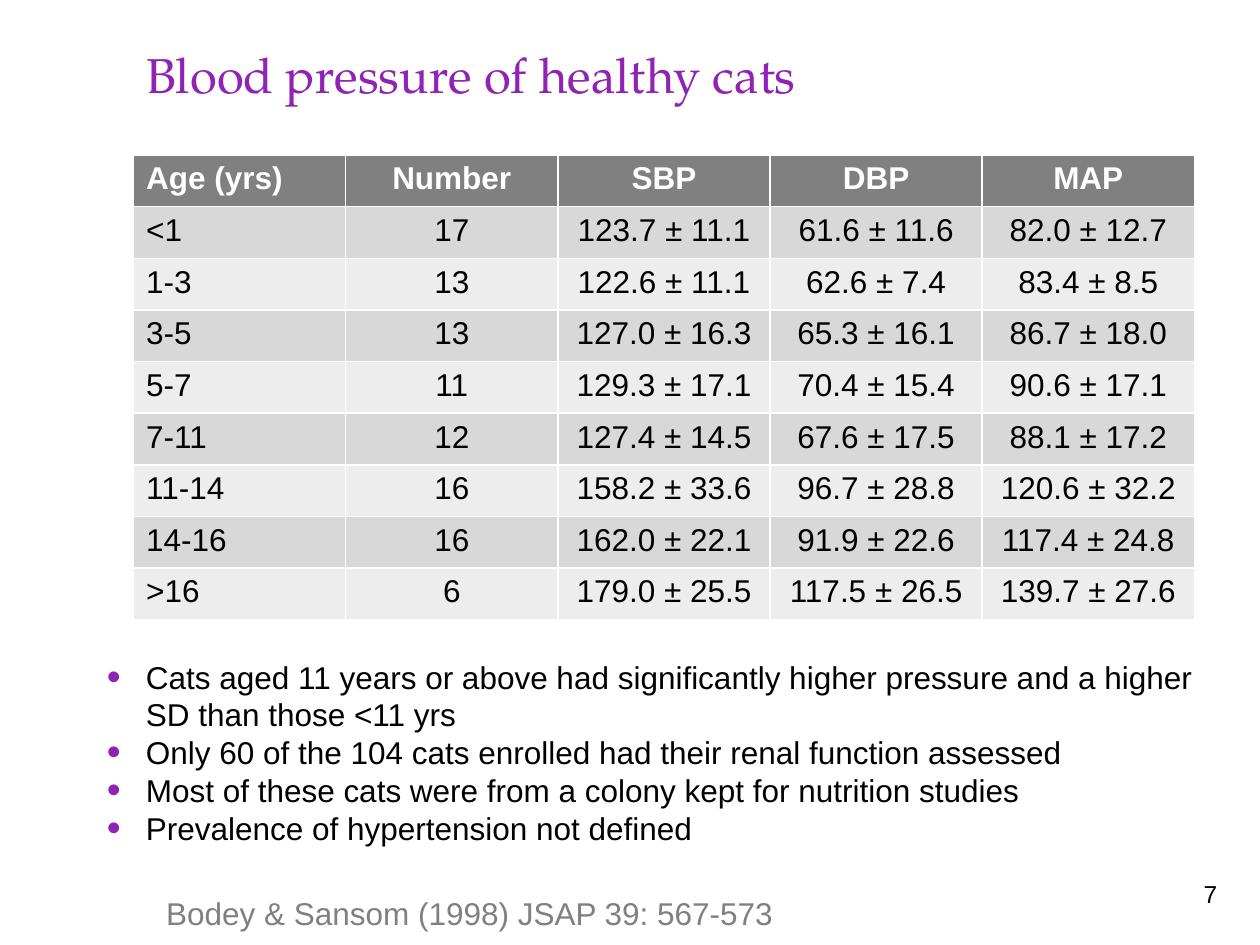
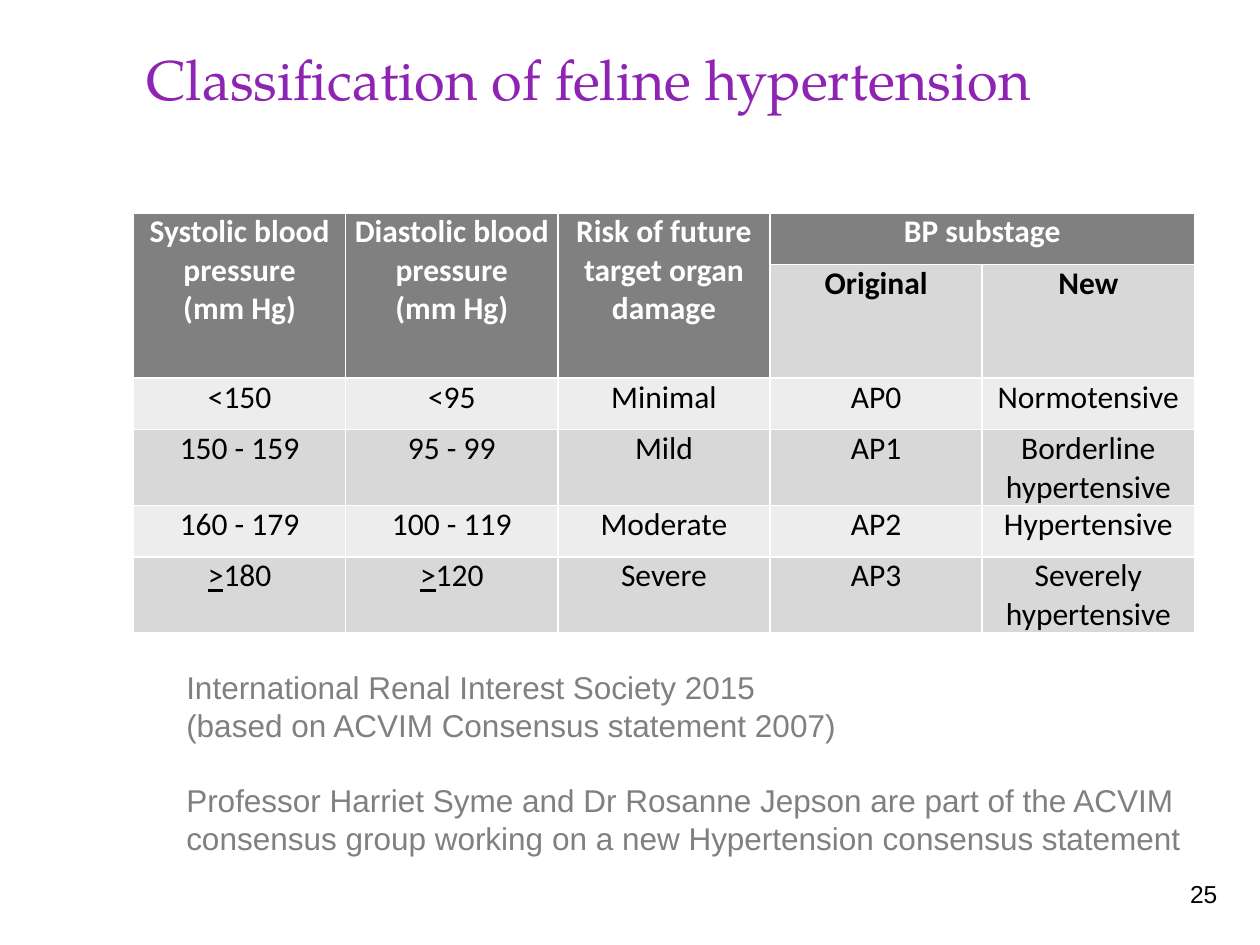
from lxml import etree
from pptx import Presentation
from pptx import util as u
from pptx.dml.color import RGBColor
from pptx.enum import text
from pptx.oxml import ns

PURPLE = RGBColor(0x8F, 0x23, 0xB3)
GREY = RGBColor(0x80, 0x80, 0x80)
BAND_DARK = RGBColor(0xD8, 0xD8, 0xD8)
BAND_LIGHT = RGBColor(0xED, 0xED, 0xED)
WHITE = RGBColor(0xFF, 0xFF, 0xFF)
BLACK = RGBColor(0, 0, 0)

TITLE_FONT = "TeX Gyre Pagella"
BODY_FONT = "Arial"
LEFT, WIDTH, ROW_HEIGHT = 1.06, 8.42, 0.41
TITLE_ONLY = 5
CENTER, RIGHT = text.PP_ALIGN.CENTER, text.PP_ALIGN.RIGHT

READINGS = [
    ("Age (yrs)", "Number", "SBP", "DBP", "MAP"),
    ("<1", "17", "123.7 ± 11.1", "61.6 ± 11.6", "82.0 ± 12.7"),
    ("1-3", "13", "122.6 ± 11.1", "62.6 ± 7.4", "83.4 ± 8.5"),
    ("3-5", "13", "127.0 ± 16.3", "65.3 ± 16.1", "86.7 ± 18.0"),
    ("5-7", "11", "129.3 ± 17.1", "70.4 ± 15.4", "90.6 ± 17.1"),
    ("7-11", "12", "127.4 ± 14.5", "67.6 ± 17.5", "88.1 ± 17.2"),
    ("11-14", "16", "158.2 ± 33.6", "96.7 ± 28.8", "120.6 ± 32.2"),
    ("14-16", "16", "162.0 ± 22.1", "91.9 ± 22.6", "117.4 ± 24.8"),
    (">16", "6", "179.0 ± 25.5", "117.5 ± 26.5", "139.7 ± 27.6"),
]
FINDINGS = [
    "Cats aged 11 years or above had significantly higher pressure and a higher SD than those <11 yrs",
    "Only 60 of the 104 cats enrolled had their renal function assessed",
    "Most of these cats were from a colony kept for nutrition studies",
    "Prevalence of hypertension not defined",
]
STAGES = [
    ("Systolic blood pressure\n(mm Hg)", "Diastolic blood pressure\n(mm Hg)",
     "Risk of future target organ damage", "BP substage", ""),
    ("", "", "", "Original", "New"),
    ("<150", "<95", "Minimal", "AP0", "Normotensive"),
    ("150 - 159", "95 - 99", "Mild", "AP1", "Borderline hypertensive"),
    ("160 - 179", "100 - 119", "Moderate", "AP2", "Hypertensive"),
    (">180", ">120", "Severe", "AP3", "Severely hypertensive"),
]
STAGE_HEIGHTS = [ROW_HEIGHT, 0.49, ROW_HEIGHT, 0.6, ROW_HEIGHT, 0.6]
SOURCES = [
    "International Renal Interest Society 2015",
    "(based on ACVIM Consensus statement 2007)",
    "Professor Harriet Syme and Dr Rosanne Jepson are part of the ACVIM "
    "consensus group working on a new Hypertension consensus statement",
]


def set_font(para, size, color, name=BODY_FONT, bold=False):
    font = para.font
    font.size, font.name, font.bold = u.Pt(size), name, bold
    font.color.rgb = color


def add_bullet(para):
    properties = para._p.get_or_add_pPr()
    indent = u.Inches(0.31)
    properties.set("marL", str(indent))
    properties.set("indent", str(-indent))
    color = etree.SubElement(properties, ns.qn("a:buClr"))
    etree.SubElement(color, ns.qn("a:srgbClr"), val=str(PURPLE))
    etree.SubElement(properties, ns.qn("a:buSzPct"), val="126000")
    etree.SubElement(properties, ns.qn("a:buFont"), typeface=BODY_FONT)
    etree.SubElement(properties, ns.qn("a:buChar"), char="•")


class Deck:
    def __init__(self):
        self.deck = Presentation()
        self.deck.slide_width, self.deck.slide_height = u.Inches(10), u.Inches(7.5)
        self.page = None

    def add_page(self, title, title_size, number):
        self.page = self.deck.slides.add_slide(self.deck.slide_layouts[TITLE_ONLY])
        box = self.page.shapes.title
        box.left, box.top = u.Inches(LEFT), u.Inches(0.31)
        box.width, box.height = u.Inches(WIDTH), u.Inches(1.18)
        frame = box.text_frame
        frame.text = title
        frame.auto_size = text.MSO_AUTO_SIZE.NONE
        frame.vertical_anchor = text.MSO_ANCHOR.TOP
        frame.margin_top = frame.margin_bottom = u.Inches(0.04)
        para = frame.paragraphs[0]
        para.alignment = text.PP_ALIGN.LEFT
        set_font(para, title_size, PURPLE, TITLE_FONT)
        self.add_text([number], 9.29, 6.93, 0.47, 0.31, size=14)[0].alignment = RIGHT

    def add_text(self, lines, left, top, width, height, size=18, color=BLACK,
                 bullets=False, wrap=True):
        """Add one paragraph per line and return the paragraphs."""
        box = self.page.shapes.add_textbox(
            u.Inches(left), u.Inches(top), u.Inches(width), u.Inches(height))
        frame = box.text_frame
        frame.word_wrap = wrap
        frame.text = "\n".join(lines)
        for para in frame.paragraphs:
            if bullets:
                add_bullet(para)
            set_font(para, size, color)
        return frame.paragraphs

    def add_table(self, rows, top, heights, font=BODY_FONT):
        """Add a full-width table with a grey header and alternating bands."""
        columns = len(rows[0])
        table = self.page.shapes.add_table(
            len(rows), columns, u.Inches(LEFT), u.Inches(top),
            u.Inches(WIDTH), u.Inches(sum(heights))).table
        for row, height in zip(table.rows, heights):
            row.height = u.Inches(height)
        for r, values in enumerate(rows):
            for c, value in enumerate(values):
                cell = table.cell(r, c)
                cell.text = value
                fill = GREY if r == 0 else BAND_DARK if r % 2 else BAND_LIGHT
                cell.fill.solid()
                cell.fill.fore_color.rgb = fill
                for para in cell.text_frame.paragraphs:
                    para.alignment = CENTER
                    set_font(para, 18, BLACK if r else WHITE, font, bold=r == 0)
        return table


def build_readings(deck):
    deck.add_page("Blood pressure of healthy cats", 28, "7")
    table = deck.add_table(READINGS, 1.23, [ROW_HEIGHT] * len(READINGS))
    for r in range(len(READINGS)):
        table.cell(r, 0).text_frame.paragraphs[0].alignment = text.PP_ALIGN.LEFT
    deck.add_text(["Bodey & Sansom (1998) JSAP 39: 567-573"],
                  1.22, 7.05, 5.06, 0.4, color=GREY, wrap=False)
    deck.add_text(FINDINGS, 0.75, 5.17, 9.13, 1.62, bullets=True)


def build_stages(deck):
    deck.add_page("Classification of feline hypertension", 32, "25")
    table = deck.add_table(STAGES, 1.69, STAGE_HEIGHTS, "Calibri")
    for cell in table.iter_cells():
        cell.margin_left = cell.margin_right = u.Inches(0.01)
        cell.margin_top = cell.margin_bottom = 0
    for c in range(3):
        table.cell(0, c).merge(table.cell(1, c))
    table.cell(0, 3).merge(table.cell(0, 4))
    for c in (3, 4):
        table.cell(1, c).text_frame.paragraphs[0].font.bold = True
    for c in (0, 1):
        para = table.cell(len(STAGES) - 1, c).text_frame.paragraphs[0]
        span = para.runs[0]
        sign, limit = span.text[0], span.text[1:]
        span.text = sign
        span.font.underline = True
        para.add_run().text = limit
    paragraphs = deck.add_text(SOURCES, 1.38, 5.25, 8.11, 1.62, color=GREY)
    paragraphs[-1].space_before = u.Pt(21.5)


def main():
    deck = Deck()
    build_readings(deck)
    build_stages(deck)
    deck.deck.save("out.pptx")


if __name__ == "__main__":
    main()
